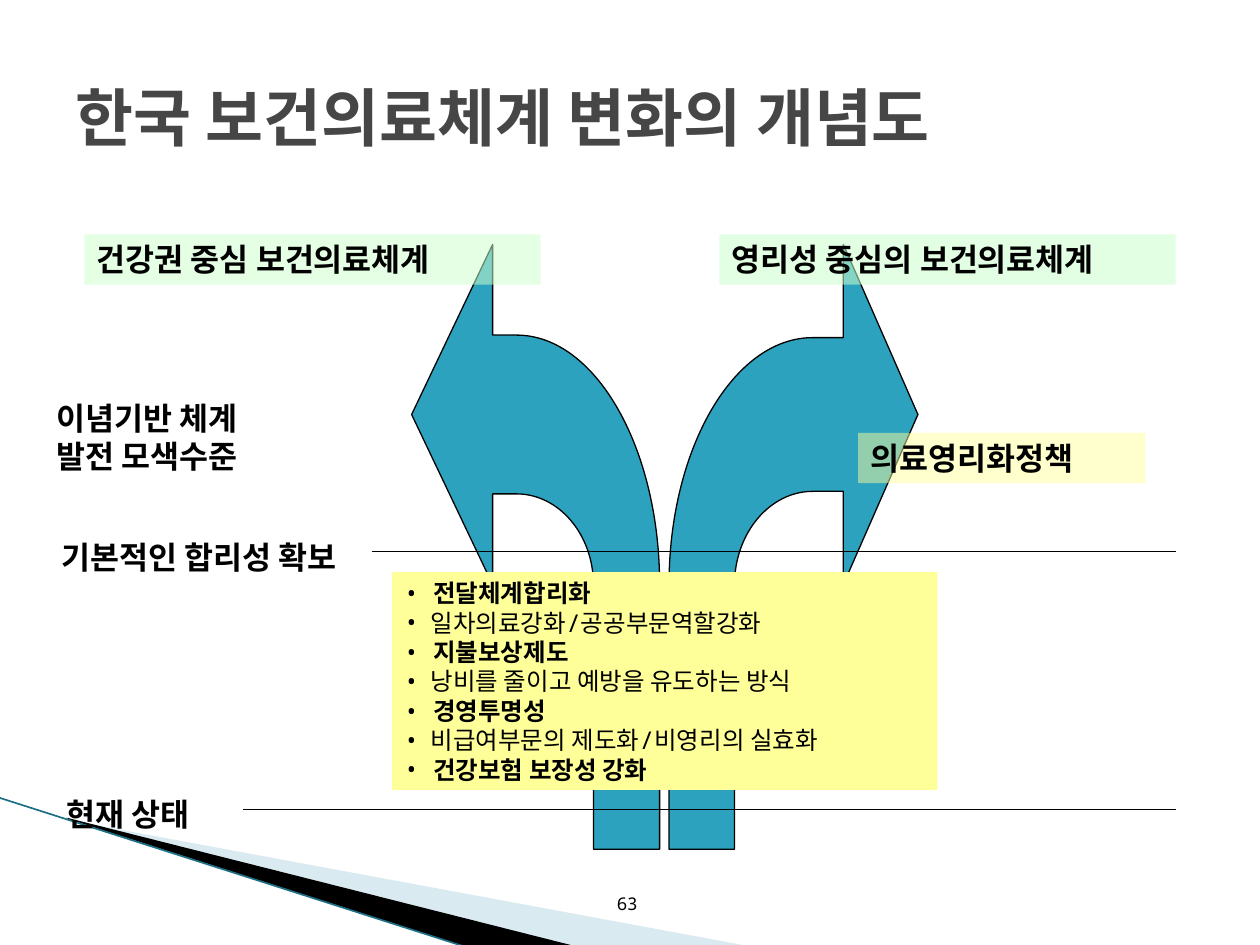
from dataclasses import dataclass

from lxml.etree import SubElement
from pptx import Presentation
from pptx.dml.color import RGBColor
from pptx.enum.shapes import MSO_CONNECTOR as Connector, MSO_SHAPE as Shape
from pptx.enum.text import MSO_ANCHOR as Anchor, MSO_AUTO_SIZE as AutoSize, PP_ALIGN as Align
from pptx.oxml.ns import qn
from pptx.util import Inches, Pt

# The slide is a grid of 100 columns by 75 rows; outlines use hundredths of a cell
CELL = Inches(0.1)
COLUMNS, ROWS = 100, 75
FINE = 100


@dataclass(frozen=True)
class Theme:
    font: str = "Noto Sans Mono"
    title_size: int = 36
    label_size: int = 18
    list_size: int = 14
    number_size: int = 10
    ink: str = "000000"
    title: str = "464646"
    arrow: str = "2DA2BF"
    green: str = "CCFFCC"
    yellow: str = "FFFF99"
    pale_blue: str = "A0CBDC"
    edge_teal: str = "1C6F84"
    line_width: float = 0.75
    edge_width: float = 0.95


@dataclass(frozen=True)
class Label:
    text: str
    column: float
    row: float
    width: float
    height: float = 4
    fill: str | None = None
    opacity: int = 100


@dataclass(frozen=True)
class BentArrow:
    """An arrow rising from the bottom and bending sideways to its tip."""
    tip: float
    neck: float
    bend: float
    outer: tuple[float, float]
    inner: tuple[float, float]
    side: int  # 1 points right, -1 points left


THEME = Theme()
HEAD_TOP, TIP_ROW, BEND_ROW, FOOT_ROW = 19.4, 32.9, 46.4, 67.4
ARC = 0.55  # handle length of a quarter arc, as a share of its radius

LABELS = [
    Label("건강권 중심 보건의료체계", 6.7, 18.6, 36.2, fill=THEME.green, opacity=53),
    Label("영리성 중심의 보건의료체계", 57.1, 18.6, 36.2, fill=THEME.green, opacity=55),
    Label("현재 상태", 4.3, 62.6, 18.9),
    Label("기본적인 합리성 확보", 3.9, 42.2, 29.5),
    Label("이념기반 체계 발전 모색수준", 3.5, 31.2, 20.5, 7),
]
POLICY = Label("의료영리화정책", 68.1, 34.36, 22.8, fill=THEME.yellow, opacity=49)
REFORM_BOX = Label("", 31.1, 45.4, 43.3, 17.3, THEME.yellow)
REFORMS = [
    ("전달체계합리화", "일차의료강화/공공부문역할강화"),
    ("지불보상제도", "낭비를 줄이고 예방을 유도하는 방식"),
    ("경영투명성", "비급여부문의 제도화/비영리의 실효화"),
    ("건강보험 보장성 강화", None),
]
ARROWS = [
    BentArrow(72.85, 66.93, 64.5, (11.4, 19.6), (6.2, 7.4), 1),
    BentArrow(32.67, 39.1, 41, (11.35, 19.8), (6.1, 7.2), -1),
]


def cells(*counts: float) -> list[int]:
    return [round(count * CELL) for count in counts]


def set_fill(shape, color: str, opacity: int = 100) -> None:
    shape.shadow.inherit = False
    shape.fill.solid()
    shape.fill.fore_color.rgb = RGBColor.from_string(color)
    if opacity < 100:
        tint = shape.fill._xPr.find(qn("a:solidFill"))[0]
        SubElement(tint, qn("a:alpha"), val=str(opacity * 1000))


def format_para(para, size: int, bold: bool = False, color: str = THEME.ink) -> None:
    for span in para.runs:
        span.font.name = THEME.font
        span.font.size = Pt(size)
        span.font.bold = bold
        span.font.color.rgb = RGBColor.from_string(color)


def add_bullet(para, indent: float) -> None:
    properties = para._p.get_or_add_pPr()
    properties.set("marL", str(Inches(indent)))
    properties.set("indent", str(-Inches(indent)))
    SubElement(properties, qn("a:buFont"), typeface=THEME.font)
    SubElement(properties, qn("a:buChar"), char="•")


def add_label(page, label: Label):
    place = cells(label.column, label.row, label.width, label.height)
    if label.fill:
        box = page.shapes.add_shape(Shape.RECTANGLE, *place)
        set_fill(box, label.fill, label.opacity)
        box.line.fill.background()
    else:
        box = page.shapes.add_textbox(*place)
    frame = box.text_frame
    frame.word_wrap = True
    frame.auto_size = AutoSize.SHAPE_TO_FIT_TEXT
    frame.vertical_anchor = Anchor.TOP
    frame.text = label.text
    frame.paragraphs[0].alignment = Align.LEFT
    format_para(frame.paragraphs[0], THEME.label_size, bold=True)
    return box


def add_line(page, start: tuple, end: tuple, color: str, width: float) -> None:
    line = page.shapes.add_connector(Connector.STRAIGHT, *cells(*start, *end))
    line.line.color.rgb = RGBColor.from_string(color)
    line.line.width = Pt(width)
    SubElement(line._element.spPr, qn("a:effectLst"))


def add_outline(page, points: list[tuple], color: str, opacity: int = 100):
    fine = [(round(x * FINE), round(y * FINE)) for x, y in points]
    builder = page.shapes.build_freeform(*fine[0], scale=CELL / FINE)
    builder.add_line_segments(fine[1:], close=True)
    shape = builder.convert_to_shape()
    set_fill(shape, color, opacity)
    shape.line.fill.background()
    return shape


def set_frame(shape, *frame: float) -> None:
    """Give an outline another frame while its points stay in place."""
    left, top, width, height = cells(*frame)
    unit = CELL / FINE
    shift_x, shift_y = round((shape.left - left) / unit), round((shape.top - top) / unit)
    outline = next(shape._element.iter(qn("a:path")))
    outline.set("w", str(round(width / unit)))
    outline.set("h", str(round(height / unit)))
    for point in outline.iter(qn("a:pt")):
        point.set("x", str(int(point.get("x")) + shift_x))
        point.set("y", str(int(point.get("y")) + shift_y))
    shape.left, shape.top, shape.width, shape.height = left, top, width, height


def curve_segments(shape, *starts: int) -> None:
    """Turn three straight segments, from each start, into one curve."""
    outline = next(shape._element.iter(qn("a:path")))
    segments = outline.findall(qn("a:lnTo"))
    for start in starts:
        first, *others = segments[start:start + 3]
        first.tag = qn("a:cubicBezTo")
        curve = first
        for segment in others:
            curve.append(segment[0])
            outline.remove(segment)


def quarter_arc(arrow: BentArrow, radii: tuple[float, float]) -> list[tuple]:
    """Curve points from the top of the bend down to the stem."""
    shares = [(0, 1), (ARC, 1), (1, ARC), (1, 0)]
    return [(arrow.bend - arrow.side * radii[0] * across, BEND_ROW - radii[1] * up)
            for across, up in shares]


def add_bent_arrow(page, arrow: BentArrow) -> None:
    outer, inner = quarter_arc(arrow, arrow.outer), quarter_arc(arrow, arrow.inner)
    points = [(arrow.tip, TIP_ROW), (arrow.neck, HEAD_TOP), (arrow.neck, outer[0][1]),
              *outer, (outer[-1][0], FOOT_ROW), (inner[-1][0], FOOT_ROW),
              *reversed(inner), (arrow.neck, inner[0][1]), (arrow.neck, BEND_ROW)]
    shape = add_outline(page, points, THEME.arrow)
    curve_segments(shape, points.index(outer[1]) - 1, points.index(inner[2]) - 1)
    shape.line.color.rgb = RGBColor.from_string(THEME.ink)
    shape.line.width = Pt(THEME.line_width)


def add_reforms(page) -> None:
    frame = add_label(page, REFORM_BOX).text_frame
    rows = [(text, level) for pair in REFORMS for level, text in enumerate(pair) if text]
    for index, (text, level) in enumerate(rows):
        para = frame.add_paragraph() if index else frame.paragraphs[0]
        para.text = text
        para.level = level
        para.alignment = Align.LEFT
        add_bullet(para, 0.21 if level else 0.23)
        format_para(para, THEME.list_size, bold=level == 0)


def main() -> None:
    deck = Presentation()
    deck.slide_width, deck.slide_height = cells(COLUMNS, ROWS)
    page = deck.slides.add_slide(deck.slide_layouts.get_by_name("Title Only"))

    # Corner decoration
    pale = [(5.5, 65.1), (59.5, 75.1), (45.6, 75.1), (5.5, 65)]
    dark = [(5.3, 64.9), (45.7, 75.1), (37.2, 75.2), (5.4, 65)]
    set_frame(add_outline(page, pale, THEME.pale_blue, 40), 7.8, 54.7, 41.6, 15.8)
    set_frame(add_outline(page, dark, THEME.ink), -0.6, 63.3, 41.6, 9.2)
    add_line(page, (-0.1, 63.3), (37.1, 75.2), THEME.edge_teal, THEME.edge_width)

    # Slide number
    number = page.shapes.add_textbox(*cells(47.6, 69, 4, 4)).text_frame
    number.text = "63"
    number.word_wrap = True
    number.vertical_anchor = Anchor.BOTTOM
    number.paragraphs[0].alignment = Align.RIGHT
    format_para(number.paragraphs[0], THEME.number_size)

    # Title
    title = page.shapes.title
    title.left, title.top, title.width, title.height = cells(5, 3, 90, 12.5)
    title.text_frame.text = "한국 보건의료체계 변화의 개념도"
    title.text_frame.vertical_anchor = Anchor.MIDDLE
    title.text_frame.paragraphs[0].alignment = Align.LEFT
    format_para(title.text_frame.paragraphs[0], THEME.title_size, True, THEME.title)

    # Diverging arrows and level lines
    for arrow in ARROWS:
        add_bent_arrow(page, arrow)
    for start, row in ((29.5, 43.77), (19.3, 64.25)):
        add_line(page, (start, row), (93.3, row), THEME.ink, THEME.line_width)

    # Labels and reform list
    for label in LABELS:
        add_label(page, label)
    add_reforms(page)
    add_label(page, POLICY)

    deck.save("out.pptx")


if __name__ == "__main__":
    main()
